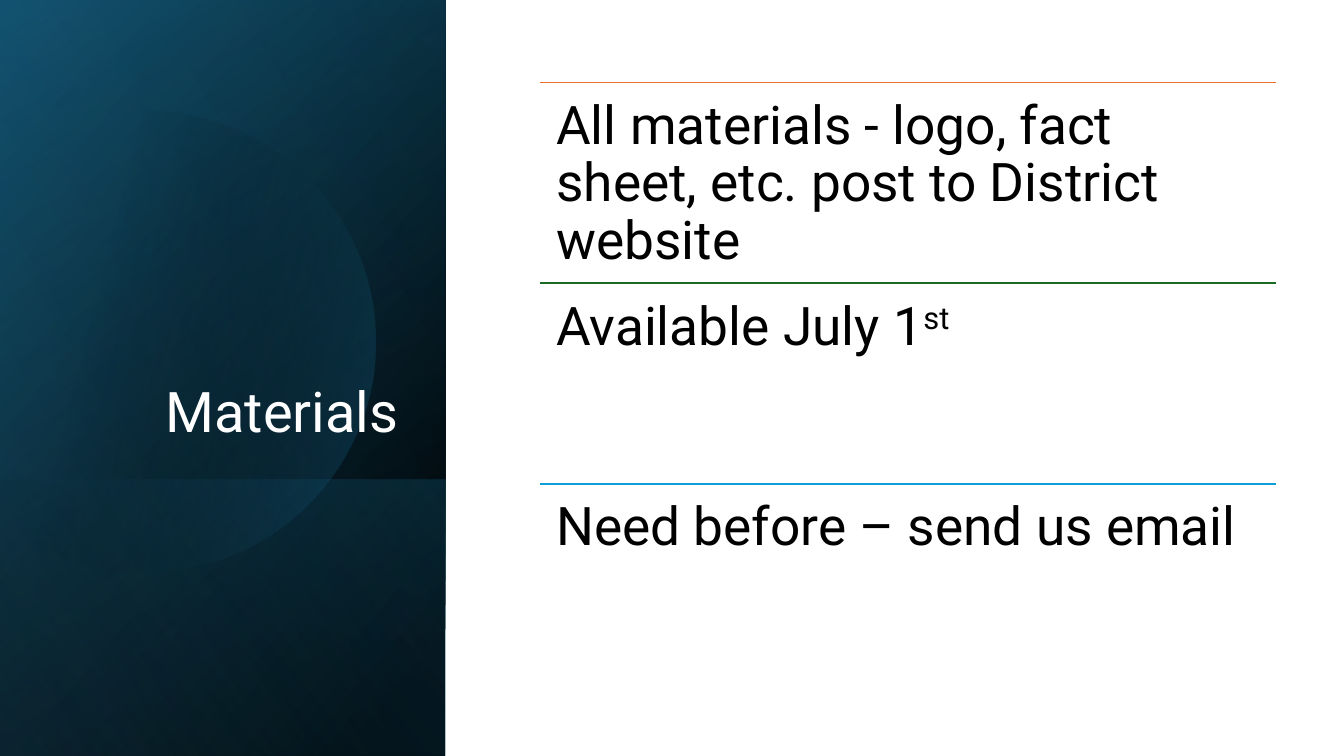
import math
import pptx
import pptx.dml.color
import pptx.enum.shapes
import pptx.enum.text
import pptx.oxml
import pptx.oxml.ns
import pptx.util

Pt = pptx.util.Pt
RGB = pptx.dml.color.RGBColor
qn = pptx.oxml.ns.qn

FONT = "Roboto"
BLACK = RGB(0x00, 0x00, 0x00)
WHITE = RGB(0xFF, 0xFF, 0xFF)
NAVY = RGB(0x10, 0x48, 0x62)
TEAL = RGB(0x15, 0x60, 0x82)
SKY = RGB(0x46, 0xB1, 0xE1)
ORANGE = RGB(0xE9, 0x71, 0x32)
GREEN = RGB(0x19, 0x6B, 0x24)
BLUE = RGB(0x0F, 0x9E, 0xD5)

SLIDE_W, SLIDE_H = 960, 540
PANEL_W = 318.24
LIST_X, LIST_Y, LIST_W, ROW_H = 386, 59, 525.2, 143.3

# Each row: rule colour, text, superscript
ROWS = [
    (ORANGE, "All materials - logo, fact sheet, etc. post to District website", ""),
    (GREEN, "Available July 1", "st"),
    (BLUE, "Need before – send us email", ""),
]


def set_gradient(sp, stops, angle):
    """Fill with two stops of (percent, colour, opacity percent); angle is clockwise."""
    sp.shadow.inherit = False
    sp.line.fill.background()
    sp.fill.gradient()
    sp.fill.gradient_angle = 360 - angle
    for stop, (position, color, _) in zip(sp.fill.gradient_stops, stops):
        stop.position = position / 100
        stop.color.rgb = color
    colors = sp._element.spPr.iter(qn("a:srgbClr"))
    for clr, (_, _, opacity) in zip(colors, stops):
        alpha = pptx.oxml.parse_xml(
            f'<a:alpha {pptx.oxml.ns.nsdecls("a")} val="{opacity * 1000}"/>')
        clr.append(alpha)


def add_panel(s, top, height, stops, angle):
    """Add a left-edge panel, turned a quarter and mirrored so its gradient follows."""
    offset = (PANEL_W - height) / 2
    sp = s.shapes.add_shape(
        pptx.enum.shapes.MSO_SHAPE.RECTANGLE,
        Pt(offset), Pt(top - offset), Pt(height), Pt(PANEL_W))
    sp.rotation = 90
    sp._element.spPr.xfrm.set("flipH", "1")
    set_gradient(sp, stops, angle)


def add_cut_circle(s, cx, cy, radius, stops, angle):
    """Add a circle cut off by the left slide edge."""
    limit = math.acos(-cx / radius)
    steps = 120
    angles = [limit * (2 * i / steps - 1) for i in range(steps + 1)]
    points = [(Pt(cx + radius * math.cos(a)), Pt(cy + radius * math.sin(a)))
              for a in angles]
    builder = s.shapes.build_freeform(*points[0])
    builder.add_line_segments(points[1:], close=True)
    set_gradient(builder.convert_to_shape(), stops, angle)


def add_text(s, x, y, w, h, text, size, color):
    """Add a wrapped one-paragraph text box and return its text frame."""
    tf = s.shapes.add_textbox(Pt(x), Pt(y), Pt(w), Pt(h)).text_frame
    tf.word_wrap = True
    p = tf.paragraphs[0]
    p.line_spacing = 0.9
    p.font.name = FONT
    p.font.size = Pt(size)
    p.font.color.rgb = color
    p.add_run().text = text
    return tf


def add_rule(s, x, y, w, color):
    line = s.shapes.add_connector(
        pptx.enum.shapes.MSO_CONNECTOR.STRAIGHT, Pt(x), Pt(y), Pt(x + w), Pt(y))
    line.line.color.rgb = color
    line.line.width = Pt(1)
    line._element.spPr.append(pptx.oxml.parse_xml(
        f'<a:effectLst {pptx.oxml.ns.nsdecls("a")}/>'))


def add_row(s, y, color, text, superscript):
    add_rule(s, LIST_X, y, LIST_W, color)
    tf = add_text(s, LIST_X, y, LIST_W, ROW_H, text, 38, BLACK)
    tf.margin_left = tf.margin_right = tf.margin_top = tf.margin_bottom = Pt(11.4)
    if superscript:
        r = tf.paragraphs[0].add_run()
        r.text = superscript
        r.font._element.set("baseline", "30000")


def main():
    prs = pptx.Presentation()
    prs.slide_width, prs.slide_height = Pt(SLIDE_W), Pt(SLIDE_H)
    s = prs.slides.add_slide(prs.slide_layouts[6])

    # Layered gradient panel
    add_panel(s, 0, SLIDE_H, [(8, BLACK, 100), (100, NAVY, 100)], 50)
    add_panel(s, 0, SLIDE_H, [(0, BLACK, 0), (99, TEAL, 46)], 30)
    add_panel(s, 342.7, 197.3, [(2, TEAL, 29), (100, BLACK, 30)], 130)
    add_cut_circle(s, 103, 244, 165, [(29, BLACK, 0), (100, TEAL, 43)], 14)
    add_panel(s, 0, SLIDE_H, [(0, BLACK, 0), (99, SKY, 11)], 120)

    # Title
    tf = add_text(s, 46, 132.5, 245.5, 188.6, "Materials", 40, WHITE)
    tf.vertical_anchor = pptx.enum.text.MSO_ANCHOR.BOTTOM
    tf.paragraphs[0].alignment = pptx.enum.text.PP_ALIGN.RIGHT

    # Ruled list
    for i, row in enumerate(ROWS):
        add_row(s, LIST_Y + i * ROW_H, *row)

    prs.save("out.pptx")


if __name__ == "__main__":
    main()
